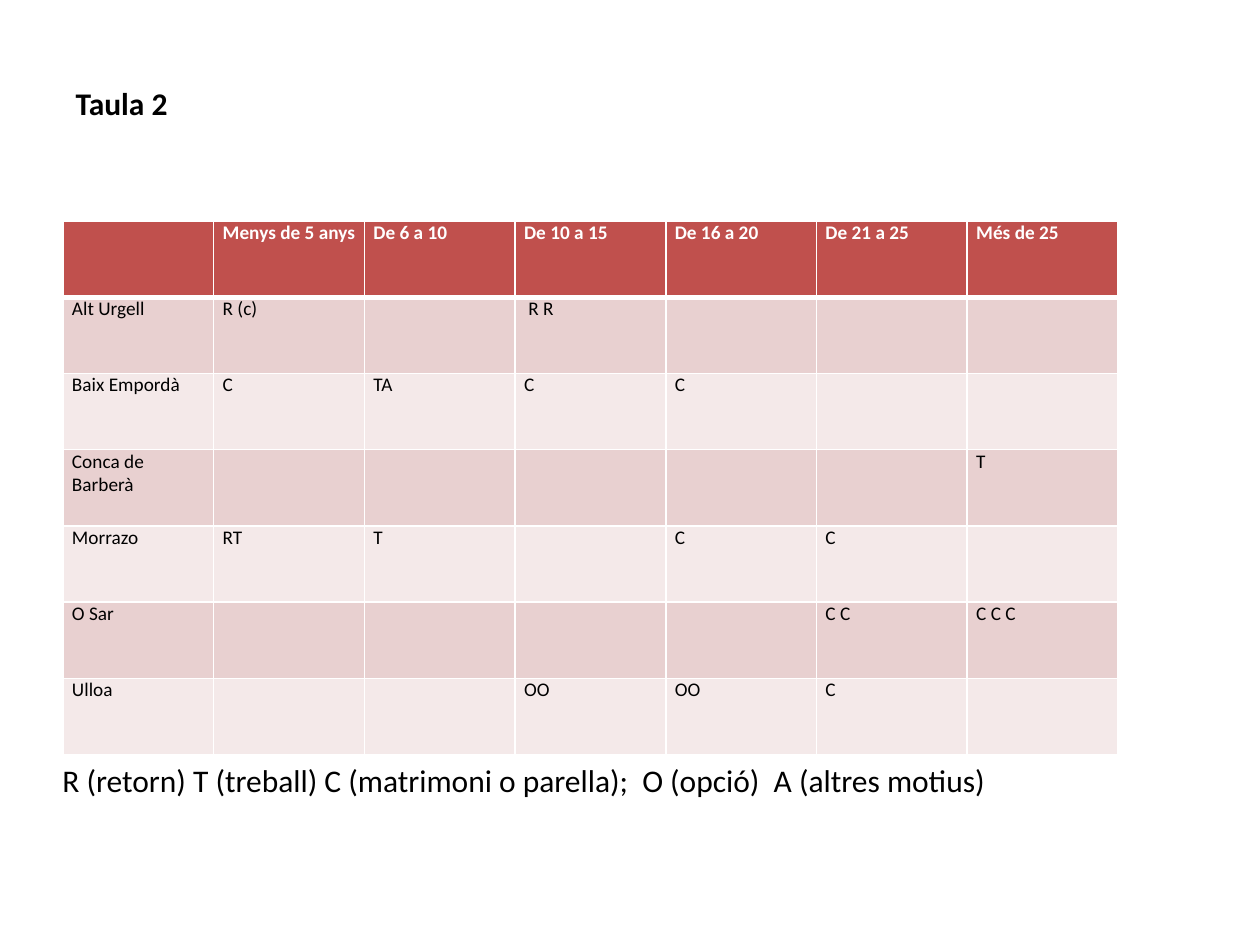
from lxml import etree
from pptx import Presentation
from pptx.dml.color import RGBColor
from pptx.enum.text import MSO_ANCHOR, PP_ALIGN
from pptx.oxml.ns import qn
from pptx.util import Pt

TOP, LEFT = MSO_ANCHOR.TOP, PP_ALIGN.LEFT
TITLE_ONLY = 5

TITLE = "Taula 2"
LEGEND = "R (retorn) T (treball) C (matrimoni o parella);  O (opció)  A (altres motius)"
PERIODS = ["", "Menys de 5 anys", "De 6 a 10", "De 10 a 15", "De 16 a 20", "De 21 a 25", "Més de 25"]
REGIONS = [
    ["Alt Urgell", "R (c)", "", " R R", "", "", ""],
    ["Baix Empordà", "C", "TA", "C", "C", "", ""],
    ["Conca de Barberà", "", "", "", "", "", "T"],
    ["Morrazo", "RT", "T", "", "C", "C", ""],
    ["O Sar", "", "", "", "", "C C", "C C C"],
    ["Ulloa", "", "", "OO", "OO", "C", ""],
]

THEME = {
    "font": "Calibri",
    "ink": "000000",
    "header_ink": "FFFFFF",
    "header": "C0504D",
    "bands": ["E8D0D0", "F4E9E9"],
    "grid": "FFFFFF",
    "text_size": 18,
    "cell_size": 11,
    "grid_width": 1,
    "header_rule": 3,
}

# Left, top, width, height in px
SLIDE_SIZE = (1260, 945)
TITLE_BOX = (63, 78, 1108, 50)
TABLE_BOX = (63, 221, 1055, 534)
LEGEND_BOX = (50, 755, 1090, 50)
CELL_INSET = 9


def px(length):
    return round(length * 914400 / 126)


def write(frame, text, size, color, bold=False):
    frame.word_wrap = True
    paragraph = frame.paragraphs[0]
    paragraph.alignment = LEFT
    paragraph.text = text
    style = {"name": THEME["font"], "size": Pt(size), "bold": bold}
    for font in [paragraph.font] + [run.font for run in paragraph.runs]:
        for key, value in style.items():
            setattr(font, key, value)
        font.color.rgb = RGBColor.from_string(color)


def add_borders(cell, top, bottom):
    """Draw the four cell borders; must run before the cell gets its fill."""
    thin = THEME["grid_width"]
    properties = cell._tc.get_or_add_tcPr()
    for side, width in {"L": thin, "R": thin, "T": top, "B": bottom}.items():
        line = etree.SubElement(properties, qn(f"a:ln{side}"), w=str(Pt(width)))
        fill = etree.SubElement(line, qn("a:solidFill"))
        etree.SubElement(fill, qn("a:srgbClr"), val=THEME["grid"])


def format_cell(cell, text, row):
    header = row == 0
    thin, thick = THEME["grid_width"], THEME["header_rule"]
    add_borders(cell, thick if row == 1 else thin, thick if header else thin)
    cell.fill.solid()
    color = THEME["header"] if header else THEME["bands"][(row - 1) % 2]
    cell.fill.fore_color.rgb = RGBColor.from_string(color)
    layout = {"margin_left": px(CELL_INSET), "margin_right": px(CELL_INSET),
              "margin_top": 0, "margin_bottom": 0, "vertical_anchor": TOP}
    for key, value in layout.items():
        setattr(cell, key, value)
    ink = THEME["header_ink"] if header else THEME["ink"]
    write(cell.text_frame, text, THEME["cell_size"], ink, bold=header)


def add_table(slide):
    rows = [PERIODS] + REGIONS
    box = [px(length) for length in TABLE_BOX]
    table = slide.shapes.add_table(len(rows), len(PERIODS), *box).table
    for column in table.columns:
        column.width = box[2] // len(PERIODS)
    for r, texts in enumerate(rows):
        table.rows[r].height = box[3] // len(rows)
        for c, text in enumerate(texts):
            format_cell(table.cell(r, c), text, r)


def main():
    deck = Presentation()
    deck.slide_width, deck.slide_height = map(px, SLIDE_SIZE)
    slide = deck.slides.add_slide(deck.slide_layouts[TITLE_ONLY])

    title = slide.shapes.title
    for key, length in zip(("left", "top", "width", "height"), TITLE_BOX):
        setattr(title, key, px(length))
    title.text_frame.vertical_anchor = TOP
    write(title.text_frame, TITLE, THEME["text_size"], THEME["ink"], bold=True)

    add_table(slide)

    legend = slide.shapes.add_textbox(*map(px, LEGEND_BOX))
    write(legend.text_frame, LEGEND, THEME["text_size"], THEME["ink"])
    deck.save("out.pptx")


if __name__ == "__main__":
    main()
